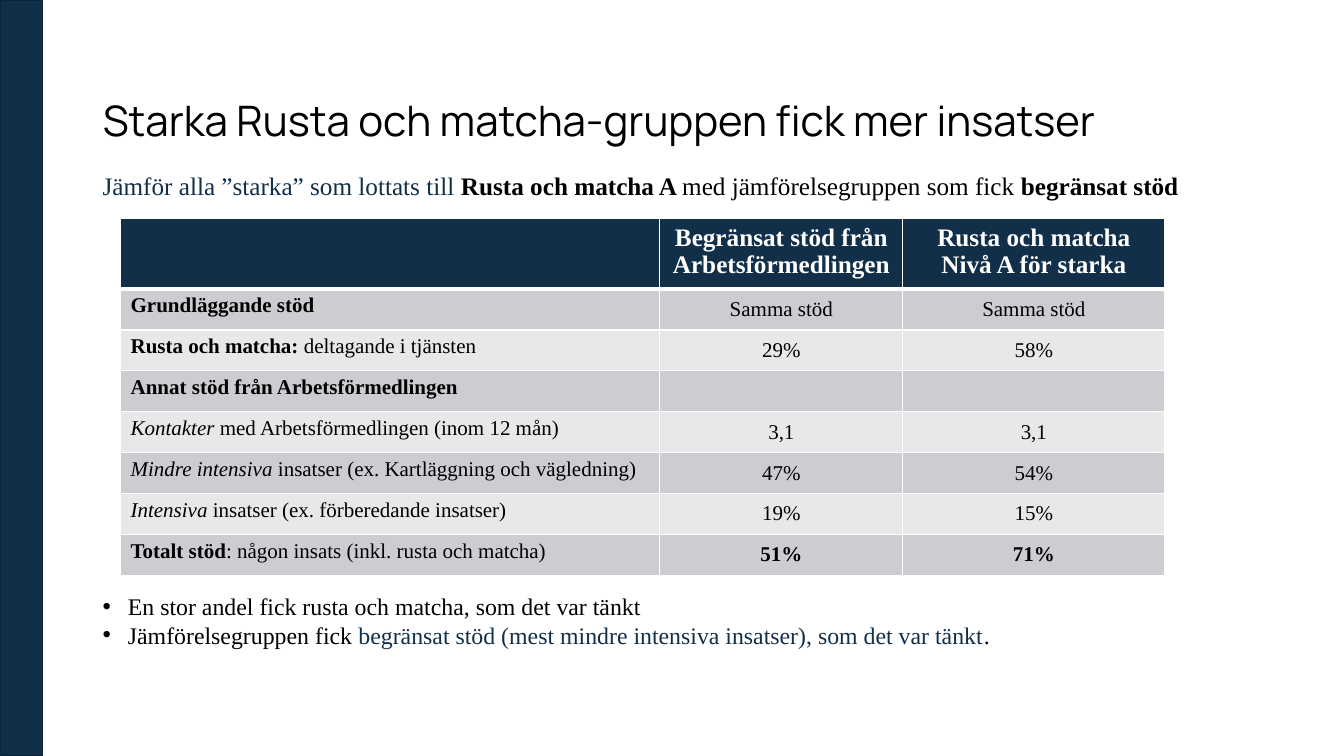
"""Builds a slide that compares support given to two groups of job seekers."""
from dataclasses import dataclass

from lxml import etree
from pptx import Presentation
from pptx import util as u
from pptx.dml.color import RGBColor
from pptx.enum import shapes, text
from pptx.oxml.ns import qn

NAVY, EDGE, BLACK, WHITE = "122F49", "0D2336", "000000", "FFFFFF"
BANDS = ("CCCDD0", "E7E8E9")
SERIF, SANS = "Times New Roman", "Manrope"
WIDTH, HEIGHT = u.Inches(13.333), u.Inches(7.5)
COLUMNS = (40.13, 18.08, 19.5)
HEADER_ROW, BODY_ROW = 8.53, 5.41


@dataclass(frozen=True)
class Run:
    """A stretch of text in one style."""
    text: str
    bold: bool = False
    italic: bool = False
    color: str = BLACK


@dataclass(frozen=True)
class Box:
    """A place on the slide, in percent of its width and height."""
    left: float
    top: float
    width: float
    height: float

    def place(self) -> tuple[int, int, int, int]:
        """Return left, top, width and height as lengths."""
        return across(self.left), down(self.top), across(self.width), down(self.height)


@dataclass(frozen=True)
class Row:
    """A body row: its label and the value of each group."""
    label: tuple[Run, ...]
    values: tuple[str, str]
    bold: bool = False


BAR = Box(0, 0, 3.15, 100)
TITLE = Box(6.9, 3.2, 86.25, 16.67)
LEAD = Box(6.9, 21.87, 86.25, 5.33)
POINTS = Box(6.9, 77.6, 86.25, 10)

HEADERS = ("", "Begränsat stöd från Arbetsförmedlingen", "Rusta och matcha\nNivå A för starka")
ROWS = (
    Row((Run("Grundläggande stöd", bold=True),), ("Samma stöd", "Samma stöd")),
    Row((Run("Rusta och matcha: ", bold=True), Run("deltagande i tjänsten")), ("29%", "58%")),
    Row((Run("Annat stöd från Arbetsförmedlingen", bold=True),), ("", "")),
    Row((Run("Kontakter", italic=True), Run(" med Arbetsförmedlingen (inom 12 mån)")),
        ("3,1", "3,1")),
    Row((Run("Mindre intensiva", italic=True),
         Run(" insatser (ex. Kartläggning och vägledning)")), ("47%", "54%")),
    Row((Run("Intensiva", italic=True), Run(" insatser (ex. förberedande insatser)")),
        ("19%", "15%")),
    Row((Run("Totalt stöd", bold=True), Run(": någon insats (inkl. rusta och matcha)")),
        ("51%", "71%"), bold=True),
)
LEAD_RUNS = (
    Run("Jämför alla ”starka” som lottats till ", color=NAVY),
    Run("Rusta och matcha A ", bold=True),
    Run("med jämförelsegruppen som fick "),
    Run("begränsat stöd", bold=True),
)
POINT_RUNS = (
    (Run("En stor andel fick rusta och matcha, som det var tänkt"),),
    (Run("Jämförelsegruppen fick "),
     Run("begränsat stöd (mest mindre intensiva insatser), som det var tänkt", color=NAVY),
     Run(".")),
)


def across(share: float) -> int:
    """Return a percentage of the slide's width."""
    return round(WIDTH * share / 100)


def down(share: float) -> int:
    """Return a percentage of the slide's height."""
    return round(HEIGHT * share / 100)


def rgb(color: str) -> RGBColor:
    """Turn a hex string into a colour."""
    return RGBColor.from_string(color)


def write(p, runs: tuple[Run, ...], size: float, font: str = SERIF) -> None:
    """Add styled runs to a paragraph."""
    for run in runs:
        r = p.add_run()
        r.text = run.text
        r.font.name, r.font.size = font, u.Pt(size)
        r.font.bold, r.font.italic = run.bold, run.italic
        r.font.color.rgb = rgb(run.color)


def add_bullet(p) -> None:
    """Give a paragraph a hanging bullet."""
    props = p._p.get_or_add_pPr()
    props.set("marL", str(u.Inches(0.25)))
    props.set("indent", str(u.Inches(-0.25)))
    etree.SubElement(props, qn("a:buFont")).set("typeface", "Arial")
    etree.SubElement(props, qn("a:buChar")).set("char", "•")


def add_text(s, box: Box, paragraphs: tuple[tuple[Run, ...], ...], size: float,
             bullets: bool = False) -> None:
    """Add a text box with one paragraph per group of runs."""
    tf = s.shapes.add_textbox(*box.place()).text_frame
    tf.word_wrap = True
    for i, runs in enumerate(paragraphs):
        p = tf.add_paragraph() if i else tf.paragraphs[0]
        if bullets:
            add_bullet(p)
        write(p, runs, size)


def set_borders(cell, top: float, bottom: float) -> None:
    """Draw white lines around a cell."""
    props = cell._tc.get_or_add_tcPr()
    for i, (side, width) in enumerate((("L", 1), ("R", 1), ("T", top), ("B", bottom))):
        line = etree.Element(qn(f"a:ln{side}"), w=str(u.Pt(width)))
        fill = etree.SubElement(line, qn("a:solidFill"))
        etree.SubElement(fill, qn("a:srgbClr")).set("val", WHITE)
        props.insert(i, line)


def style_cell(cell, color: str, top: float = 1, bottom: float = 1) -> None:
    """Fill a cell and draw its borders."""
    cell.fill.solid()
    cell.fill.fore_color.rgb = rgb(color)
    set_borders(cell, top, bottom)


def add_support_table(s) -> None:
    """Add the table of support by group."""
    height = HEADER_ROW + BODY_ROW * len(ROWS)
    box = Box(8.97, 28.9, sum(COLUMNS), height)
    table = s.shapes.add_table(len(ROWS) + 1, len(COLUMNS), *box.place()).table
    for column, share in zip(table.columns, COLUMNS):
        column.width = across(share)
    for i, row in enumerate(table.rows):
        row.height = down(BODY_ROW if i else HEADER_ROW)
    for j, header in enumerate(HEADERS):
        cell = table.cell(0, j)
        style_cell(cell, NAVY, bottom=3)
        cell.text_frame.text = header
        for p in cell.text_frame.paragraphs:
            p.alignment = text.PP_ALIGN.CENTER
            for r in p.runs:
                r.font.name, r.font.size, r.font.bold = SERIF, u.Pt(18), True
                r.font.color.rgb = rgb(WHITE)
    for i, row in enumerate(ROWS, 1):
        groups = (row.label, *((Run(v, bold=row.bold),) if v else () for v in row.values))
        for j, runs in enumerate(groups):
            cell = table.cell(i, j)
            style_cell(cell, BANDS[(i - 1) % 2], top=3 if i == 1 else 1)
            p = cell.text_frame.paragraphs[0]
            if j:
                cell.vertical_anchor = text.MSO_ANCHOR.MIDDLE
                p.alignment = text.PP_ALIGN.CENTER
            write(p, runs, 15)


def add_bar(s) -> None:
    """Add the dark bar along the left edge."""
    sp = s.shapes.add_shape(shapes.MSO_SHAPE.RECTANGLE, *BAR.place())
    sp.shadow.inherit = False
    sp.fill.solid()
    sp.fill.fore_color.rgb = rgb(NAVY)
    sp.line.color.rgb, sp.line.width = rgb(EDGE), u.Pt(1)


def set_title(s, words: str) -> None:
    """Place and format the slide's title."""
    sp = s.shapes.title
    sp.left, sp.top, sp.width, sp.height = TITLE.place()
    tf = sp.text_frame
    tf.auto_size, tf.word_wrap = text.MSO_AUTO_SIZE.NONE, True
    tf.vertical_anchor = text.MSO_ANCHOR.BOTTOM
    p = tf.paragraphs[0]
    p.alignment, p.line_spacing = text.PP_ALIGN.LEFT, 0.9
    write(p, (Run(words),), 30, SANS)


def main() -> None:
    """Build and save the slide."""
    prs = Presentation()
    prs.slide_width, prs.slide_height = WIDTH, HEIGHT
    s = prs.slides.add_slide(prs.slide_layouts[5])
    add_bar(s)
    set_title(s, "Starka Rusta och matcha-gruppen fick mer insatser")
    add_text(s, LEAD, (LEAD_RUNS,), 18)
    add_support_table(s)
    add_text(s, POINTS, POINT_RUNS, 17, bullets=True)
    prs.save("out.pptx")


if __name__ == "__main__":
    main()
